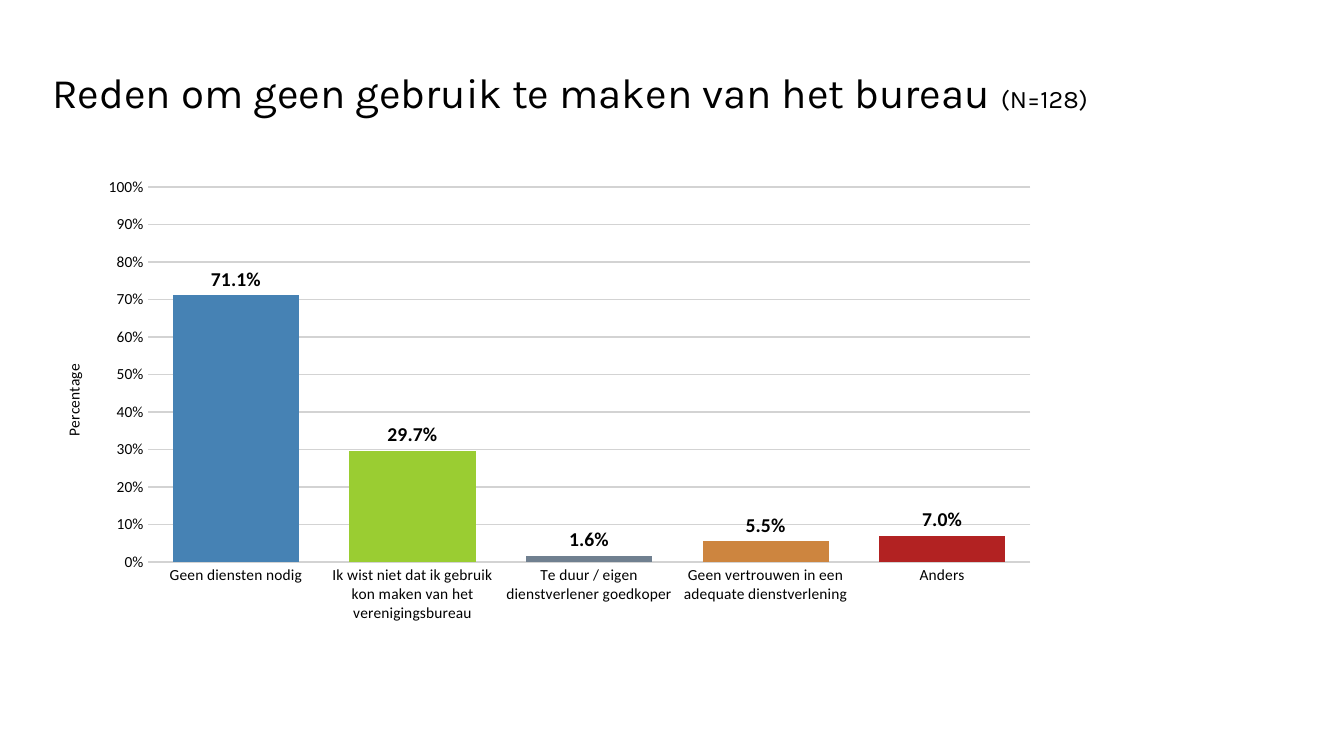
from dataclasses import dataclass

from lxml import etree
from pptx import Presentation
from pptx import util as u
from pptx.chart.data import CategoryChartData
from pptx.dml.color import RGBColor
from pptx.enum import chart as charts, text
from pptx.oxml import parse_xml
from pptx.oxml.ns import nsdecls


@dataclass(frozen=True)
class Theme:
    """Colours, fonts and type sizes of the survey deck."""

    ink: str = "000000"
    paper: str = "FFFFFF"
    grid: str = "D3D3D3"
    bars: tuple = ("4682B4", "9ACD32", "708090", "CD853F", "B22222")
    title_font: str = "Karla"
    chart_font: str = "Calibri"
    title_size: int = 30
    note_size: int = 18
    axis_size: int = 11
    label_size: int = 14


class SurveyPage:
    """Draws titles and charts on one page in the style of a theme."""

    def __init__(self, deck, theme):
        self.theme = theme
        self.page = deck.slides.add_slide(deck.slide_layouts[6])

    def style(self, font, name, size, bold=False):
        """Set the face, size, weight and ink colour of a font."""
        font.name, font.size, font.bold = name, u.Pt(size), bold
        font.color.rgb = RGBColor.from_string(self.theme.ink)

    def paint(self, fill, colour):
        """Fill with one solid colour."""
        fill.solid()
        fill.fore_color.rgb = RGBColor.from_string(colour)

    def title(self, area, heading, note):
        """Add a heading followed by a smaller note."""
        box = self.page.shapes.add_textbox(*map(u.Inches, area))
        frame = box.text_frame
        frame.word_wrap = True
        frame.vertical_anchor = text.MSO_ANCHOR.MIDDLE
        para = frame.paragraphs[0]
        para.line_spacing = 0.9
        sizes = (self.theme.title_size, self.theme.note_size)
        for words, size in zip((heading, note), sizes):
            span = para.add_run()
            span.text = words
            self.style(span.font, self.theme.title_font, size)

    def columns(self, area, axis_name, shares):
        """Add a column chart of shares with one colour per answer."""
        theme = self.theme
        data = CategoryChartData(number_format="0.0%")
        data.categories = list(shares)
        data.add_series("Series 1", list(shares.values()))
        chart = self.page.shapes.add_chart(
            charts.XL_CHART_TYPE.COLUMN_CLUSTERED, *map(u.Inches, area), data
        ).chart
        chart.has_legend = chart.has_title = False
        self.style(chart.font, theme.chart_font, theme.axis_size)

        plot = chart.plots[0]
        plot.gap_width = 40
        plot.vary_by_categories = False
        series = plot.series[0]
        self.paint(series.format.fill, theme.bars[0])
        for index, colour in enumerate(theme.bars[1:], 1):
            self.paint(series.points[index].format.fill, colour)

        labels = series.data_labels
        labels.show_value = True
        labels.number_format = "0.0%"
        labels.number_format_is_linked = False
        labels.position = charts.XL_LABEL_POSITION.OUTSIDE_END
        self.style(labels.font, theme.chart_font, theme.label_size, True)

        for axis in (chart.category_axis, chart.value_axis):
            axis.major_tick_mark = charts.XL_TICK_MARK.INSIDE
            axis.format.line.fill.background()
        self.scale(chart.value_axis, axis_name)
        plot_area = chart.element.find(".//{*}plotArea")
        backdrop = parse_xml(
            f'<c:spPr {nsdecls("c", "a")}><a:solidFill>'
            f'<a:srgbClr val="{theme.paper}"/></a:solidFill></c:spPr>'
        )
        plot_area.append(backdrop)

    def scale(self, axis, name):
        """Give the value axis its range, grid and title."""
        axis.minimum_scale, axis.maximum_scale, axis.major_unit = 0, 1, 0.1
        axis.tick_labels.number_format = "0%"
        axis.tick_labels.number_format_is_linked = False
        line = axis.major_gridlines.format.line
        line.width = u.Pt(1)
        line.color.rgb = RGBColor.from_string(self.theme.grid)
        frame = axis.axis_title.text_frame
        frame.text = name
        span = frame.paragraphs[0].runs[0]
        self.style(span.font, self.theme.chart_font, self.theme.axis_size)


def main():
    """Build the page and save the deck."""
    deck = Presentation()
    deck.slide_width, deck.slide_height = u.Inches(13.33), u.Inches(7.5)
    survey = SurveyPage(deck, Theme())
    survey.title(
        (0.42, 0.22, 11.5, 1.45),
        "Reden om geen gebruik te maken van het bureau ",
        "(N=128)",
    )
    survey.columns(
        (0.42, 1.67, 10, 4.6),
        "Percentage",
        {
            "Geen diensten nodig": 0.711,
            "Ik wist niet dat ik gebruik kon maken van het verenigingsbureau": 0.297,
            "Te duur / eigen dienstverlener goedkoper": 0.016,
            "Geen vertrouwen in een adequate dienstverlening": 0.055,
            "Anders": 0.07,
        },
    )
    deck.save("out.pptx")


if __name__ == "__main__":
    main()
